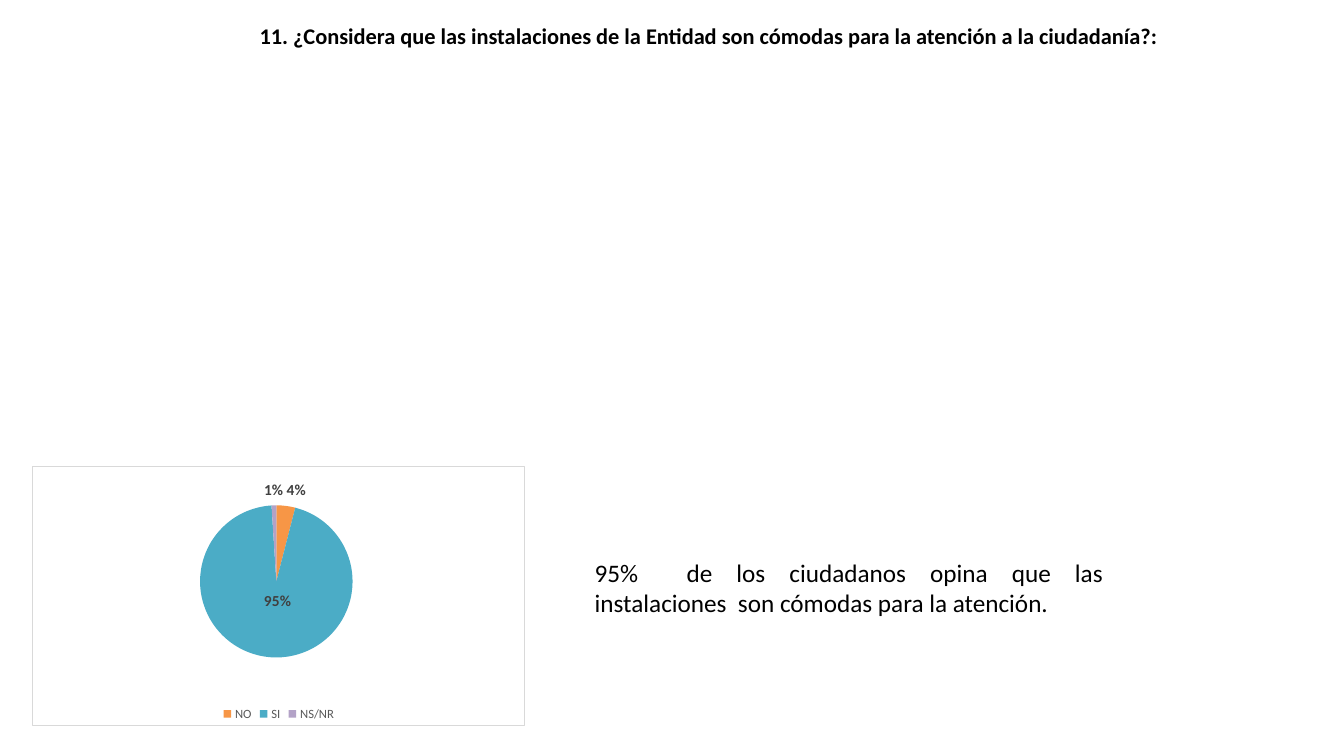
from lxml import etree
from pptx import Presentation
from pptx import util as u
from pptx.chart.data import CategoryChartData
from pptx.dml.color import RGBColor
from pptx.enum import chart as ch, text
from pptx.oxml import parse_xml
from pptx.oxml.ns import nsdecls, qn

WIDE, HIGH = 13.33, 7.5
FONT = "Calibri"
HUES = {"ink": "000000", "label": "404040", "legend": "595959", "edge": "D9D9D9",
        "back": "FFFFFF", "NO": "F79646", "SI": "4BACC6", "NS/NR": "B3A2C7"}
VOTES = {"NO": 4, "SI": 95, "NS/NR": 1}


def hue(name):
    return RGBColor.from_string(HUES[name])


def style(font, size, name="ink", bold=False):
    font.name, font.size, font.bold = FONT, u.Pt(size), bold
    font.color.rgb = hue(name)


def place(box):
    return [u.Inches(n) for n in box]


def write(slide, box, words, size, align, anchor, bold=False):
    frame = slide.shapes.add_textbox(*place(box)).text_frame
    frame.word_wrap = True
    frame.vertical_anchor = anchor
    para = frame.paragraphs[0]
    para.text, para.alignment = words, align
    style(para.font, size, bold=bold)


def layout(target=None, **shares):
    node = parse_xml(f'<c:layout {nsdecls("c")}><c:manualLayout/></c:layout>')
    rules = dict(shares)
    if target:
        rules = {"layoutTarget": target, "xMode": "edge", "yMode": "edge", **shares}
    for key, value in rules.items():
        etree.SubElement(node[0], qn("c:" + key)).set("val", str(value))
    return node


def frame(chart):
    area = parse_xml(
        f'<c:spPr {nsdecls("c", "a")}>'
        f'<a:solidFill><a:srgbClr val="{HUES["back"]}"/></a:solidFill>'
        f'<a:ln w="{u.Pt(0.75)}"><a:solidFill><a:srgbClr val="{HUES["edge"]}"/>'
        '</a:solidFill></a:ln></c:spPr>')
    root = chart.element
    root.find(qn("c:chart")).addnext(area)
    plot = root.find(".//" + qn("c:plotArea"))
    for old in plot.findall(qn("c:layout")):
        plot.remove(old)
    plot.insert(0, layout("inner", x=0.34, y=0.15, w=0.31, h=0.59))


def pie(slide, box):
    data = CategoryChartData()
    data.categories = list(VOTES)
    data.add_series("Series 1", list(VOTES.values()))
    chart = slide.shapes.add_chart(ch.XL_CHART_TYPE.PIE, *place(box), data).chart
    chart.has_title = False
    style(chart.font, 10)
    chart.has_legend = True
    chart.legend.position = ch.XL_LEGEND_POSITION.BOTTOM
    chart.legend.include_in_layout = False
    style(chart.legend.font, 9, "legend")
    chart.plots[0].vary_by_categories = True
    series = chart.plots[0].series[0]
    for i, name in enumerate(VOTES):
        fill = series.points[i].format.fill
        fill.solid()
        fill.fore_color.rgb = hue(name)
    tags = series.data_labels
    tags.show_percentage, tags.show_value = True, False
    tags.number_format, tags.number_format_is_linked = "0%", False
    tags.position = ch.XL_LABEL_POSITION.OUTSIDE_END
    style(tags.font, 11, "label", True)
    main = list(VOTES).index("SI")
    tag = series.points[main].data_label
    style(tag.font, 11, "label", True)
    tag.position = ch.XL_LABEL_POSITION.CENTER
    node = chart.element.find(".//" + qn("c:dLbl"))
    node.find(qn("c:showVal")).set("val", "0")
    node.find(qn("c:showPercent")).set("val", "1")
    node.insert(1, layout(x=0.01, y=-0.07))
    frame(chart)


def main():
    deck = Presentation()
    deck.slide_width, deck.slide_height = u.Inches(WIDE), u.Inches(HIGH)
    slide = deck.slides.add_slide(deck.slide_layouts[6])
    write(slide, (2.16, 0.11, 9.74, 0.49),
          "11. ¿Considera que las instalaciones de la Entidad son cómodas para la atención a la ciudadanía?:",
          16, text.PP_ALIGN.CENTER, text.MSO_ANCHOR.MIDDLE, True)
    pie(slide, (0.32, 4.62, 4.89, 2.58))
    write(slide, (5.8, 5.48, 5.24, 0.71),
          "95%  de los ciudadanos opina que las instalaciones  son cómodas para la atención.",
          18, text.PP_ALIGN.JUSTIFY, text.MSO_ANCHOR.TOP)
    deck.save("out.pptx")


if __name__ == "__main__":
    main()
